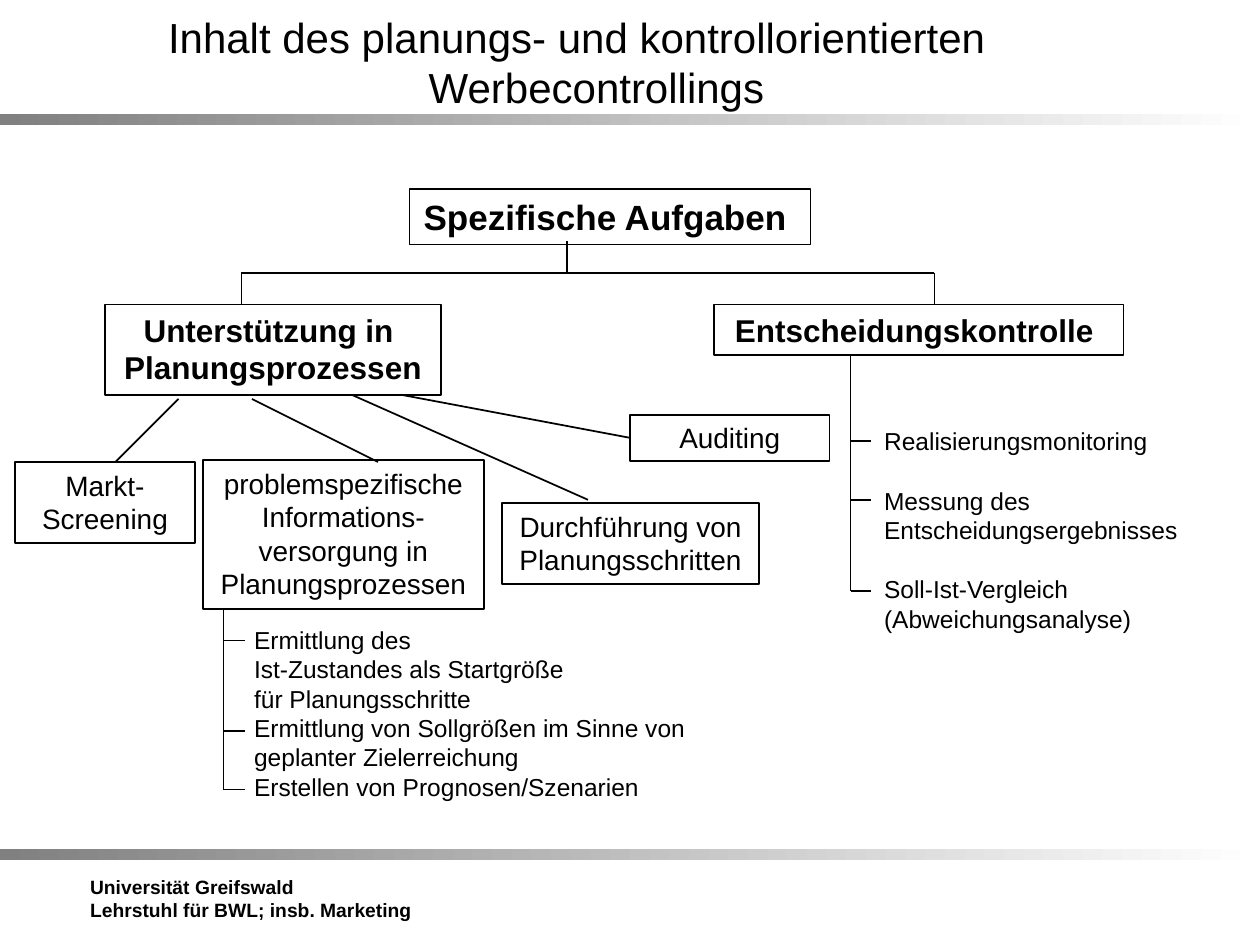
from dataclasses import dataclass

from lxml.etree import SubElement
from pptx import Presentation
from pptx.dml.color import RGBColor
from pptx.enum.shapes import MSO_CONNECTOR as CONN, MSO_SHAPE as SHAPE
from pptx.enum.text import MSO_ANCHOR as ANCHOR, MSO_AUTO_SIZE as AUTO, PP_ALIGN as ALIGN
from pptx.oxml.ns import qn
from pptx.util import Inches, Pt

COLS, ROWS = 120, 90  # slide grid, 12 units to the inch
UNIT = Inches(10) / COLS


@dataclass(frozen=True)
class Theme:
    font: str = "Arial"
    ink: RGBColor = RGBColor(0, 0, 0)
    bar: RGBColor = RGBColor(0x80, 0x80, 0x80)
    paper: RGBColor = RGBColor(0xFF, 0xFF, 0xFF)
    title: int = 24
    top: int = 20
    branch: int = 18
    leaf: int = 16
    item: int = 14
    footer: int = 11
    line: int = 1


@dataclass(frozen=True)
class Region:
    """A part of the slide grid; positions inside it count from its corner."""
    col: float
    row: float
    width: float
    height: float

    def point(self, x, y):
        return round((self.col + x) * UNIT), round((self.row + y) * UNIT)

    def rect(self, x, y, w, h):
        return *self.point(x, y), round(w * UNIT), round(h * UNIT)


THEME = Theme()


def write(sp, lines, size, bold=False, align=ALIGN.LEFT, wrap=True, grow=True):
    tf = sp.text_frame
    frame = {"word_wrap": wrap, "vertical_anchor": ANCHOR.TOP,
             "auto_size": AUTO.SHAPE_TO_FIT_TEXT if grow else AUTO.NONE}
    for name, value in frame.items():
        setattr(tf, name, value)
    tf.text = "\n".join(lines)
    for p in tf.paragraphs:
        p.alignment = align
        for r in p.runs:
            for name, value in {"name": THEME.font, "size": Pt(size), "bold": bold}.items():
                setattr(r.font, name, value)
            r.font.color.rgb = THEME.ink
    return tf.paragraphs


def place(sp, rect):
    for name, value in zip(("left", "top", "width", "height"), rect):
        setattr(sp, name, value)


def add_box(slide, rect, lines, size, bold=False, wrap=True):
    sp = slide.shapes.add_shape(SHAPE.RECTANGLE, *rect)
    sp.shadow.inherit = False
    sp.fill.background()
    sp.line.color.rgb = THEME.ink
    sp.line.width = Pt(THEME.line)
    write(sp, lines, size, bold, ALIGN.CENTER, wrap)
    return sp


def add_line(slide, start, end):
    s = slide.shapes.add_connector(CONN.STRAIGHT, *start, *end)
    s.line.color.rgb = THEME.ink
    s.line.width = Pt(THEME.line)
    SubElement(s._element.spPr, qn("a:effectLst"))
    return s


def add_bar(slide, region):
    sp = slide.shapes.add_shape(SHAPE.RECTANGLE, *region.rect(0, 0, region.width, region.height))
    sp.shadow.inherit = False
    sp.line.fill.background()
    sp.fill.gradient()
    sp.fill.gradient_angle = 0
    for stop, color in zip(sp.fill.gradient_stops, (THEME.bar, THEME.paper)):
        stop.color.rgb = color


def fill_list(sp, rect, groups, gap=0):
    """Plain list without bullets; gap is the space in points between groups."""
    place(sp, rect)
    paragraphs = write(sp, [line for group in groups for line in group], THEME.item, wrap=False)
    starts = {sum(map(len, groups[:i])) for i in range(1, len(groups))}
    for i, p in enumerate(paragraphs):
        pPr = p._p.get_or_add_pPr()
        pPr.set("marL", "0")
        pPr.set("indent", "0")
        SubElement(pPr, qn("a:buNone"))
        p.space_before = Pt(gap if i in starts else 0)


def add_bracket(slide, region, x, top, ticks, length=2):
    """Vertical stem down to the last tick, with a short tick for each item."""
    add_line(slide, region.point(x, top), region.point(x, ticks[-1]))
    for y in ticks:
        add_line(slide, region.point(x, y), region.point(x + length, y))


def build_header(slide, region):
    sp = slide.shapes.title
    place(sp, region.rect(14.8, 0.5, 84, 10.9))
    paragraphs = write(sp, ["Inhalt des planungs- und kontrollorientierten",
                            "Werbecontrollings"], THEME.title)
    paragraphs[1].alignment = ALIGN.CENTER
    add_bar(slide, Region(region.col, region.row + 10.9, region.width, 1))


def build_footer(slide, region):
    add_bar(slide, Region(region.col, region.row, region.width, 1))
    sp = slide.shapes.add_textbox(*region.rect(7.4, 1.9, 35, 7.1))
    write(sp, ["Universität Greifswald", "Lehrstuhl für BWL; insb. Marketing"],
          THEME.footer, bold=True, grow=False)


def build_top_task(slide, region):
    add_box(slide, region.rect(39, 0, 38.2, 5.3), ["Spezifische Aufgaben "],
            THEME.top, bold=True, wrap=False)
    left, trunk, right, bar = 23, 54, 89, 8
    add_line(slide, region.point(trunk, 5), region.point(trunk, bar))
    add_line(slide, region.point(left, bar), region.point(right, bar))
    for x in (left, right):
        add_line(slide, region.point(x, bar), region.point(x, region.height))


def build_planning(slide, region, body):
    add_box(slide, region.rect(10, 0, 32, 8.6), ["Unterstützung in ", "Planungsprozessen"],
            THEME.branch, bold=True)
    leaves = [
        ((1.4, 15, 17.2, 7.7), ["Markt-", "Screening"]),
        ((19.3, 14.8, 26.8, 14.2),
         ["problemspezifische Informations- versorgung in Planungsprozessen"]),
        ((47.8, 18.9, 24.5, 7.7), ["Durchführung von Planungsschritten"]),
        ((60, 10.5, 19, 4.4), ["Auditing"]),
    ]
    boxes = [add_box(slide, region.rect(*rect), lines, THEME.leaf) for rect, lines in leaves]
    spokes = [((17, 9), (11, 15)), ((24, 9), (36, 15)),
              ((33.5, 8.6), (56, 18.6)), ((38.2, 8.6), (60, 12.7))]
    links = [add_line(slide, region.point(*a), region.point(*b)) for a, b in spokes]
    links[-1].end_connect(boxes[-1], 1)
    fill_list(body, region.rect(23, 29.9, 43.7, 18.1), [
        ["Ermittlung des", "Ist-Zustandes als Startgröße", "für Planungsschritte"],
        ["Ermittlung von Sollgrößen im Sinne von", "geplanter Zielerreichung"],
        ["Erstellen von Prognosen/Szenarien"]])
    add_bracket(slide, region, 21.3, 29, (32, 40.6, 46.2))


def build_control(slide, region, body):
    add_box(slide, region.rect(0, 0, region.width, 4.8), ["Entscheidungskontrolle "],
            THEME.branch, bold=True)
    fill_list(body, region.rect(15, 11, 30.5, 21), [
        ["Realisierungsmonitoring"],
        ["Messung des", "Entscheidungsergebnisses"],
        ["Soll-Ist-Vergleich", "(Abweichungsanalyse)"]], gap=17)
    add_bracket(slide, region, 13, 4.8, (13, 18.6, 27.3))


def main():
    prs = Presentation()
    prs.slide_width, prs.slide_height = round(COLS * UNIT), round(ROWS * UNIT)
    slide = prs.slides.add_slide(prs.slide_layouts.get_by_name("Two Content"))
    planning_list, control_list = list(slide.placeholders)[1:]
    build_header(slide, Region(0, 0, COLS, 12))
    build_top_task(slide, Region(0, 18, COLS, 11))
    build_planning(slide, Region(0, 29, 79, 49), planning_list)
    build_control(slide, Region(68, 29, 39, 32), control_list)
    build_footer(slide, Region(0, 80.9, COLS, 9.1))
    prs.save("out.pptx")


if __name__ == "__main__":
    main()
